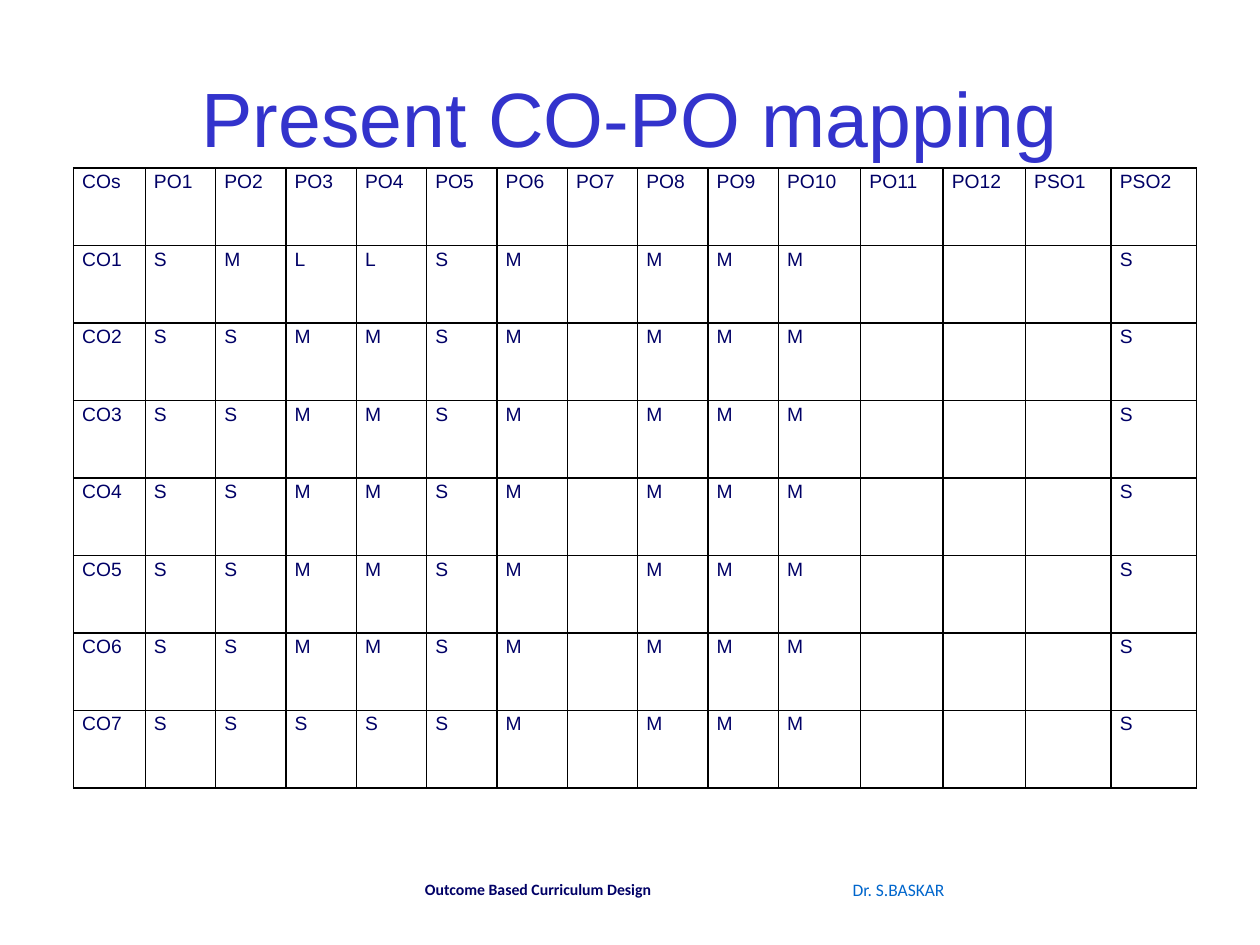
"""Build the CO-PO mapping slide."""
import lxml.etree
import pptx
import pptx.dml.color
import pptx.enum.text
import pptx.oxml.ns
import pptx.util

Pt = pptx.util.Pt
RGB = pptx.dml.color.RGBColor
Align = pptx.enum.text.PP_ALIGN
Anchor = pptx.enum.text.MSO_ANCHOR
qn = pptx.oxml.ns.qn

NAVY = RGB(0x00, 0x00, 0x66)
INDIGO = RGB(0x33, 0x33, 0xCC)
AZURE = RGB(0x00, 0x66, 0xCC)
BLACK = RGB(0x00, 0x00, 0x00)

HEADS = (["COs"] + [f"PO{n}" for n in range(1, 13)] + ["PSO1", "PSO2"])
GRADES = ["SMLLSM MMM   S"] + ["SSMMSM MMM   S"] * 5 + ["SSSSSM MMM   S"]
WIDTHS = [41] + [40.2] * 9 + [47.1] * 3 + [48.9] * 2
HEIGHT = 44.28


class Deck:
    def __init__(self, slide):
        self.slide = slide
        self.face = "Arial"
        self.foot = "Calibri"

    def style(self, para, face, size, color, align, bold=False):
        para.alignment = align
        font = para.font
        font.name, font.size, font.bold = face, Pt(size), bold
        font.color.rgb = color

    def text(self, words, box, face, size, color, align,
             bold=False, anchor=Anchor.TOP, inset=7.2):
        frame = self.slide.shapes.add_textbox(*map(Pt, box)).text_frame
        frame.word_wrap = True
        frame.vertical_anchor = anchor
        frame.margin_left = Pt(inset)
        para = frame.paragraphs[0]
        para.text = words
        self.style(para, face, size, color, align, bold)

    def border(self, cell):
        props = cell._tc.get_or_add_tcPr()
        for side in ("lnL", "lnR", "lnT", "lnB"):
            line = lxml.etree.SubElement(props, qn(f"a:{side}"), w=str(Pt(1)))
            fill = lxml.etree.SubElement(line, qn("a:solidFill"))
            lxml.etree.SubElement(fill, qn("a:srgbClr"), val=str(BLACK))

    def cell(self, cell, words):
        self.border(cell)
        cell.fill.background()
        cell.margin_left = cell.margin_right = Pt(5)
        cell.margin_top = cell.margin_bottom = 0
        para = cell.text_frame.paragraphs[0]
        para.text = words
        para.line_spacing = 1.15
        self.style(para, self.face, 11, NAVY, Align.JUSTIFY)

    def table(self, rows, left, top, widths, height):
        table = self.slide.shapes.add_table(
            len(rows), len(widths), Pt(left), Pt(top),
            Pt(sum(widths)), Pt(height * len(rows))).table
        table.first_row = table.horz_banding = False
        for col, width in zip(table.columns, widths):
            col.width = Pt(width)
        for row, words in zip(table.rows, rows):
            row.height = Pt(height)
            for cell, word in zip(row.cells, words):
                self.cell(cell, word)


def main():
    show = pptx.Presentation()
    show.slide_width, show.slide_height = Pt(720), Pt(540)
    deck = Deck(show.slides.add_slide(show.slide_layouts[6]))
    deck.text("Outcome Based Curriculum Design", (140, 499, 334.8, 18),
              deck.foot, 9, NAVY, Align.CENTER, bold=True)
    deck.text("Dr. S.BASKAR", (466.6, 499, 100.8, 19.4),
              deck.foot, 10, AZURE, Align.LEFT, inset=20.6)
    deck.text("Present CO-PO mapping", (36, 21.6, 648, 90),
              deck.face, 44, INDIGO, Align.CENTER, anchor=Anchor.MIDDLE)
    rows = [HEADS] + [[f"CO{n}"] + [mark.strip() for mark in marks]
                      for n, marks in enumerate(GRADES, 1)]
    deck.table(rows, 42, 96, WIDTHS, HEIGHT)
    show.save("out.pptx")


if __name__ == "__main__":
    main()
